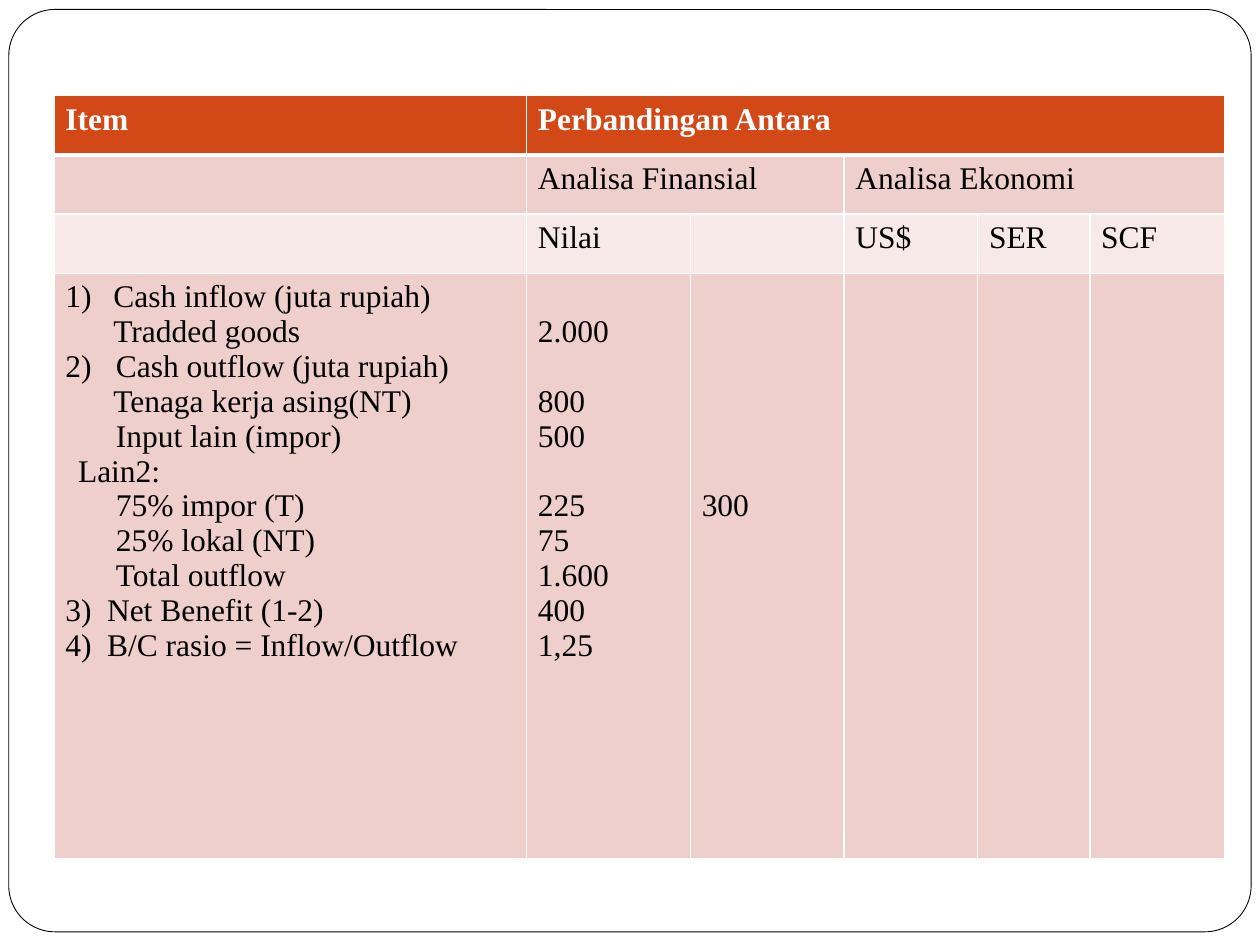
from dataclasses import dataclass

from lxml.etree import SubElement
from pptx import Presentation
from pptx.dml.color import RGBColor
from pptx.enum.shapes import MSO_SHAPE
from pptx.oxml.ns import qn
from pptx.util import Inches, Pt


@dataclass(frozen=True)
class Theme:
    font: str = "Times New Roman"
    size: float = 18
    line_height: float = 19.9
    paper: str = "FFFFFF"
    ink: str = "000000"
    header: str = "D34817"
    band: str = "EFCFCC"
    light_band: str = "F7E9E8"
    frame_line: float = 0.5
    border: float = 1
    header_border: float = 3


@dataclass(frozen=True)
class Line:
    text: str
    indent: float = 0
    number: int = 0
    skipped: int = 0  # empty text lines above


@dataclass(frozen=True)
class Entry:
    row: int
    column: int
    lines: tuple[Line, ...]
    span: int = 1


THEME = Theme()
SLIDE_WIDTH, SLIDE_HEIGHT = 10, 7.5
TABLE_LEFT, TABLE_TOP = 0.43, 0.76
COLUMNS = (3.75, 1.3, 1.22, 1.06, 0.89, 1.07)
ROWS = (0.47, 0.47, 0.47, 4.65)
ROW_FILLS = (THEME.header, THEME.band, THEME.light_band, THEME.band)
MARGIN_SIDE, MARGIN_TOP = 0.09, 0.05

ITEMS = (
    Line("Cash inflow (juta rupiah)", 0.38, number=1),
    Line("Tradded goods", 0.38),
    Line("Cash outflow (juta rupiah)", 0.4, number=2),
    Line("Tenaga kerja asing(NT)", 0.38),
    Line("Input lain (impor)", 0.4),
    Line("Lain2:", 0.1),
    Line("75% impor (T)", 0.4),
    Line("25% lokal (NT)", 0.4),
    Line("Total outflow", 0.4),
    Line("Net Benefit (1-2)", 0.33, number=3),
    Line("B/C rasio = Inflow/Outflow", 0.33, number=4),
)
VALUES = (
    Line("2.000", skipped=1),
    Line("800", skipped=1),
    Line("500"),
    Line("225", skipped=1),
    Line("75"),
    Line("1.600"),
    Line("400"),
    Line("1,25"),
)
ENTRIES = (
    Entry(0, 0, (Line("Item"),)),
    Entry(0, 1, (Line("Perbandingan Antara"),), span=5),
    Entry(1, 1, (Line("Analisa Finansial"),), span=2),
    Entry(1, 3, (Line("Analisa Ekonomi"),), span=3),
    Entry(2, 1, (Line("Nilai"),)),
    Entry(2, 3, (Line("US$"),)),
    Entry(2, 4, (Line("SER"),)),
    Entry(2, 5, (Line("SCF"),)),
    Entry(3, 0, ITEMS),
    Entry(3, 1, VALUES),
    Entry(3, 2, (Line("300", skipped=6),)),
)


def color(value: str) -> RGBColor:
    return RGBColor.from_string(value)


def draw_frame(page) -> None:
    box = page.shapes.add_shape(
        MSO_SHAPE.ROUNDED_RECTANGLE,
        Inches(0.007 * SLIDE_WIDTH), Inches(0.01 * SLIDE_HEIGHT),
        Inches(0.986 * SLIDE_WIDTH), Inches(0.976 * SLIDE_HEIGHT),
    )
    box.adjustments[0] = 0.05
    box.shadow.inherit = False
    box.fill.solid()
    box.fill.fore_color.rgb = color(THEME.paper)
    box.line.color.rgb = color(THEME.ink)
    box.line.width = Pt(THEME.frame_line)


def set_borders(cell, row: int) -> None:
    """Rule all four sides, heavier between the header and the body."""
    widths = {"a:lnL": THEME.border, "a:lnR": THEME.border,
              "a:lnT": THEME.header_border if row == 1 else THEME.border,
              "a:lnB": THEME.header_border if row == 0 else THEME.border}
    properties = cell._tc.get_or_add_tcPr()
    for tag, width in widths.items():
        side = SubElement(properties, qn(tag), w=str(Pt(width)))
        fill = SubElement(side, qn("a:solidFill"))
        SubElement(fill, qn("a:srgbClr"), val=THEME.paper)


def style_cell(cell, row: int) -> None:
    set_borders(cell, row)
    cell.fill.solid()
    cell.fill.fore_color.rgb = color(ROW_FILLS[row])
    cell.margin_left = cell.margin_right = Inches(MARGIN_SIDE)
    cell.margin_top = cell.margin_bottom = Inches(MARGIN_TOP)


def indent_paragraph(para, line: Line) -> None:
    properties = para._p.get_or_add_pPr()
    properties.set("marL", str(Inches(line.indent)))
    properties.set("indent", str(-Inches(line.indent) if line.number else 0))
    if line.number:
        SubElement(properties, qn("a:buFont"), typeface=THEME.font)
        SubElement(properties, qn("a:buAutoNum"), type="arabicParenR",
                   startAt=str(line.number))


def write_entry(table, entry: Entry) -> None:
    cell = table.cell(entry.row, entry.column)
    if entry.span > 1:
        cell.merge(table.cell(entry.row, entry.column + entry.span - 1))
    is_header = entry.row == 0
    cell.text_frame.text = "\n".join(line.text for line in entry.lines)
    for index, (para, line) in enumerate(zip(cell.text_frame.paragraphs, entry.lines)):
        gap = Pt(line.skipped * THEME.line_height)
        if index == 0:
            cell.margin_top = Inches(MARGIN_TOP) + gap
        elif gap:
            para.space_before = gap
        indent_paragraph(para, line)
        for span in para.runs:
            span.font.name = THEME.font
            span.font.size = Pt(THEME.size)
            span.font.bold = is_header
            span.font.color.rgb = color(THEME.paper if is_header else THEME.ink)


def draw_table(page) -> None:
    table = page.shapes.add_table(
        len(ROWS), len(COLUMNS), Inches(TABLE_LEFT), Inches(TABLE_TOP),
        Inches(sum(COLUMNS)), Inches(sum(ROWS)),
    ).table
    table.horz_banding = False
    for column, width in zip(table.columns, COLUMNS):
        column.width = Inches(width)
    for index, (row, height) in enumerate(zip(table.rows, ROWS)):
        row.height = Inches(height)
        for cell in row.cells:
            style_cell(cell, index)
    for entry in ENTRIES:
        write_entry(table, entry)


def main() -> None:
    deck = Presentation()
    deck.slide_width, deck.slide_height = Inches(SLIDE_WIDTH), Inches(SLIDE_HEIGHT)
    page = deck.slides.add_slide(deck.slide_layouts[6])
    draw_frame(page)
    draw_table(page)
    deck.save("out.pptx")


if __name__ == "__main__":
    main()
